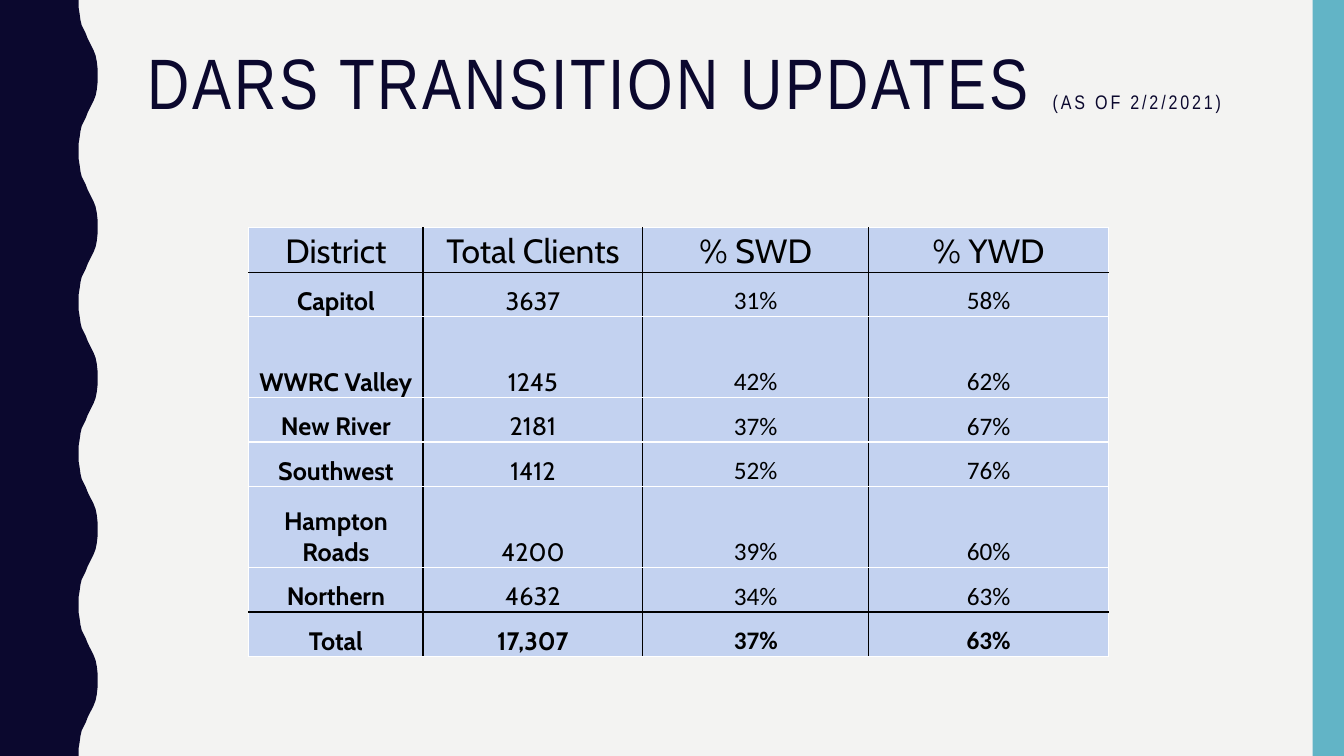
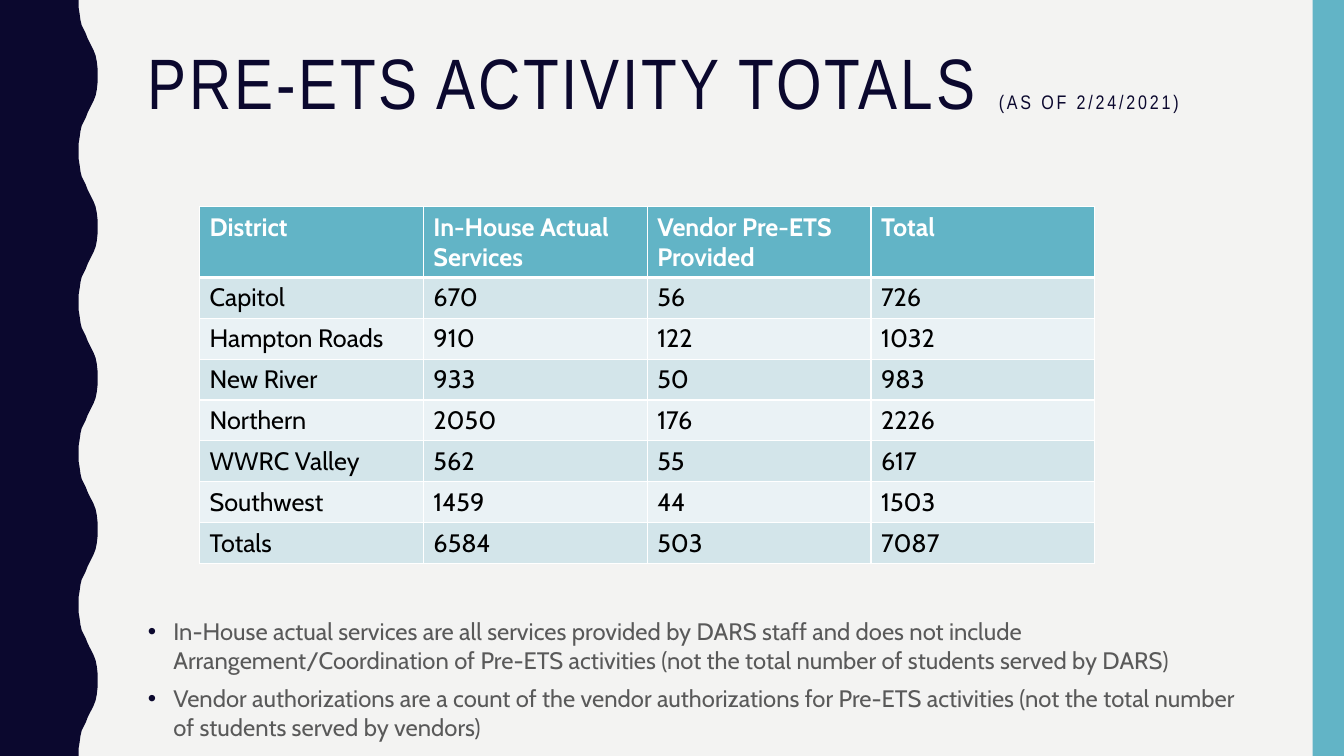
from dataclasses import dataclass
from typing import Callable, NamedTuple, Optional

from lxml import etree
from pptx import Presentation
from pptx.dml.color import RGBColor
from pptx.enum.shapes import MSO_SHAPE
from pptx.enum.text import MSO_ANCHOR, PP_ALIGN
from pptx.oxml.ns import qn
from pptx.util import Cm, Pt

RECTANGLE = MSO_SHAPE.RECTANGLE
TOP, BOTTOM = MSO_ANCHOR.TOP, MSO_ANCHOR.BOTTOM
LEFT, CENTER = PP_ALIGN.LEFT, PP_ALIGN.CENTER


@dataclass(frozen=True)
class Theme:
    background: str = "F3F3F2"
    navy: str = "0B082E"
    teal: str = "62B4C6"
    black: str = "000000"
    white: str = "FFFFFF"
    gray: str = "595959"
    periwinkle: str = "C3D2F0"
    bands: tuple[str, str] = ("D3E5EA", "EAF2F5")
    title_font: str = "Arial Narrow"
    body_font: str = "Cabin"
    figure_font: str = "Calibri"
    title_size: float = 51
    date_size: float = 14
    heading_size: float = 24
    table_size: float = 18
    note_size: float = 17


THEME = Theme()
SLIDE_WIDTH, SLIDE_HEIGHT = 33.87, 19.05
TEXT_LEFT, TEXT_WIDTH = 3.48, 28.27

# Half a wave of the left band: distance down, distance from the left edge (cm)
WAVE_COUNT = 5
WAVE_LENGTH = SLIDE_HEIGHT / WAVE_COUNT
HALF_WAVE = [
    (0, 1.98), (0.18, 1.98), (0.36, 2.01), (0.51, 2.03), (0.64, 2.06),
    (0.74, 2.11), (0.84, 2.16), (0.97, 2.21), (1.07, 2.26), (1.17, 2.31),
    (1.27, 2.36), (1.4, 2.41), (1.55, 2.44), (1.73, 2.46), (1.91, 2.46),
]


class Border(NamedTuple):
    color: str
    width: float = 1


class Borders(NamedTuple):
    left: Border
    right: Border
    top: Border
    bottom: Border


class CellStyle(NamedTuple):
    fill: str
    borders: Borders
    size: float = THEME.table_size
    font: str = THEME.body_font
    color: str = THEME.black
    bold: bool = False
    align: PP_ALIGN = LEFT
    anchor: MSO_ANCHOR = TOP
    margins: Optional[tuple[float, float, float, float]] = None


@dataclass(frozen=True)
class TableSpec:
    left: float
    top: float
    columns: list[float]
    heights: list[float]
    rows: list[list[str]]
    style: Callable[[int, int], CellStyle]


# Text
def write_text(paragraph, text: str, *, size: float, color: str,
               font: str = THEME.body_font, bold: bool = False,
               spacing: float = 0) -> None:
    run = paragraph.add_run()
    run.text = text
    run.font.size = Pt(size)
    run.font.name = font
    run.font.bold = bold
    run.font.color.rgb = RGBColor.from_string(color)
    if spacing:
        run.font._element.set("spc", str(round(spacing * 100)))


def add_text_frame(slide, top: float, height: float):
    box = slide.shapes.add_textbox(Cm(TEXT_LEFT), Cm(top), Cm(TEXT_WIDTH), Cm(height))
    box.text_frame.word_wrap = True
    return box.text_frame


def add_title(slide, title: str, date: str) -> None:
    paragraph = add_text_frame(slide, 1.07, 4.14).paragraphs[0]
    paragraph.line_spacing = 0.9
    for text, size in ((title + " ", THEME.title_size), (date, THEME.date_size)):
        write_text(paragraph, text, size=size, color=THEME.navy,
                   font=THEME.title_font, spacing=2)


def add_bullets(slide, notes: list[str]) -> None:
    frame = add_text_frame(slide, 15.42, 3.38)
    for index, note in enumerate(notes):
        paragraph = frame.add_paragraph() if index else frame.paragraphs[0]
        paragraph.space_before = Pt(7)
        properties = paragraph._p.get_or_add_pPr()
        properties.set("marL", str(Cm(0.64)))
        properties.set("indent", str(-Cm(0.64)))
        bullet_color = etree.SubElement(properties, qn("a:buClr"))
        etree.SubElement(bullet_color, qn("a:srgbClr"), val=THEME.navy)
        etree.SubElement(properties, qn("a:buFont"), typeface="Arial")
        etree.SubElement(properties, qn("a:buChar"), char="•")
        write_text(paragraph, note, size=THEME.note_size, color=THEME.gray)


# Side bands
def paint(shape, color: str) -> None:
    shape.shadow.inherit = False
    shape.fill.solid()
    shape.fill.fore_color.rgb = RGBColor.from_string(color)
    shape.line.fill.background()


def add_bands(slide) -> None:
    wave = HALF_WAVE + [(WAVE_LENGTH - y, x) for y, x in reversed(HALF_WAVE[:-1])]
    edge = [(Cm(x), Cm(number * WAVE_LENGTH + y))
            for number in range(WAVE_COUNT) for y, x in wave]
    builder = slide.shapes.build_freeform(0, 0)
    builder.add_line_segments(edge + [(0, Cm(SLIDE_HEIGHT))], close=True)
    paint(builder.convert_to_shape(), THEME.navy)

    width = 0.79
    stripe = slide.shapes.add_shape(
        RECTANGLE, Cm(SLIDE_WIDTH - width), 0, Cm(width), Cm(SLIDE_HEIGHT))
    paint(stripe, THEME.teal)


# Tables
def set_borders(cell, borders: Borders) -> None:
    properties = cell._tc.get_or_add_tcPr()
    for tag, border in zip(("a:lnL", "a:lnR", "a:lnT", "a:lnB"), borders):
        line = etree.SubElement(properties, qn(tag), w=str(Pt(border.width)))
        fill = etree.SubElement(line, qn("a:solidFill"))
        etree.SubElement(fill, qn("a:srgbClr"), val=border.color)


def fill_cell(cell, text: str, style: CellStyle) -> None:
    set_borders(cell, style.borders)
    cell.fill.solid()
    cell.fill.fore_color.rgb = RGBColor.from_string(style.fill)
    cell.vertical_anchor = style.anchor
    if style.margins:
        (cell.margin_left, cell.margin_top,
         cell.margin_right, cell.margin_bottom) = map(Cm, style.margins)
    paragraph = cell.text_frame.paragraphs[0]
    paragraph.alignment = style.align
    write_text(paragraph, text, size=style.size, color=style.color,
               font=style.font, bold=style.bold)


def add_table(slide, spec: TableSpec) -> None:
    table = slide.shapes.add_table(
        len(spec.rows), len(spec.columns), Cm(spec.left), Cm(spec.top),
        Cm(sum(spec.columns)), Cm(sum(spec.heights))).table
    table.first_row = table.horz_banding = False
    for column, width in zip(table.columns, spec.columns):
        column.width = Cm(width)
    for row, height in zip(table.rows, spec.heights):
        row.height = Cm(height)
    for row_index, values in enumerate(spec.rows):
        for column_index, value in enumerate(values):
            fill_cell(table.cell(row_index, column_index), value,
                      spec.style(row_index, column_index))


CLIENT_ROWS = [
    ["District", "Total Clients", "% SWD", "% YWD"],
    ["Capitol", "3637", "31%", "58%"],
    ["WWRC Valley", "1245", "42%", "62%"],
    ["New River", "2181", "37%", "67%"],
    ["Southwest", "1412", "52%", "76%"],
    ["Hampton Roads", "4200", "39%", "60%"],
    ["Northern", "4632", "34%", "63%"],
    ["Total", "17,307", "37%", "63%"],
]
ACTIVITY_ROWS = [
    ["District", "In-House Actual Services", "Vendor Pre-ETS Provided", "Total"],
    ["Capitol", "670", "56", "726"],
    ["Hampton Roads", "910", "122", "1032"],
    ["New River", "933", "50", "983"],
    ["Northern", "2050", "176", "2226"],
    ["WWRC Valley", "562", "55", "617"],
    ["Southwest", "1459", "44", "1503"],
    ["Totals", "6584", "503", "7087"],
]
NOTES = [
    "In-House actual services are all services provided by DARS staff and does not "
    "include Arrangement/Coordination of Pre-ETS activities (not the total number of "
    "students served by DARS)",
    "Vendor authorizations are a count of the vendor authorizations for Pre-ETS "
    "activities (not the total number of students served by vendors)",
]


def client_style(row: int, column: int) -> CellStyle:
    last_row, last_column = len(CLIENT_ROWS) - 1, len(CLIENT_ROWS[0]) - 1
    header, total = row == 0, row == last_row

    def rule(is_black: bool) -> Border:
        return Border(THEME.black if is_black else THEME.white)

    return CellStyle(
        fill=THEME.periwinkle,
        borders=Borders(rule(column > 0), rule(column < last_column),
                        rule(row in (1, last_row)), rule(row in (0, last_row - 1))),
        size=THEME.heading_size if header else THEME.table_size,
        font=THEME.figure_font if column > 1 and not header else THEME.body_font,
        bold=total or (column == 0 and not header),
        align=CENTER, anchor=BOTTOM, margins=(0.03, 0.03, 0.03, 0))


def activity_style(row: int, column: int) -> CellStyle:
    thin, thick = Border(THEME.white), Border(THEME.white, 3)
    if row == 0:
        return CellStyle(THEME.teal, Borders(thin, thin, thin, thick),
                         color=THEME.white, bold=True)
    top = thick if row == 1 else thin
    return CellStyle(THEME.bands[(row - 1) % 2], Borders(thin, thin, top, thin))


CLIENT_TABLE = TableSpec(
    left=6.27, top=5.74, columns=[4.39, 5.54, 5.69, 6.05],
    heights=[1.12, 1.12, 2.04, 1.12, 1.12, 2.04, 1.12, 1.12],
    rows=CLIENT_ROWS, style=client_style)
ACTIVITY_TABLE = TableSpec(
    left=5.03, top=5.21, columns=[5.64] * 4, heights=[1.77] + [1.03] * 7,
    rows=ACTIVITY_ROWS, style=activity_style)


# Slides
def add_slide(presentation, title: str, date: str, table: TableSpec):
    slide = presentation.slides.add_slide(presentation.slide_layouts[6])
    background = slide.background.fill
    background.solid()
    background.fore_color.rgb = RGBColor.from_string(THEME.background)
    add_bands(slide)
    add_title(slide, title, date)
    add_table(slide, table)
    return slide


def main() -> None:
    presentation = Presentation()
    presentation.slide_width = Cm(SLIDE_WIDTH)
    presentation.slide_height = Cm(SLIDE_HEIGHT)
    add_slide(presentation, "DARS TRANSITION UPDATES", "(AS OF 2/2/2021)", CLIENT_TABLE)
    activity_slide = add_slide(
        presentation, "PRE-ETS ACTIVITY TOTALS", "(AS OF 2/24/2021)", ACTIVITY_TABLE)
    add_bullets(activity_slide, NOTES)
    presentation.save("out.pptx")


if __name__ == "__main__":
    main()
